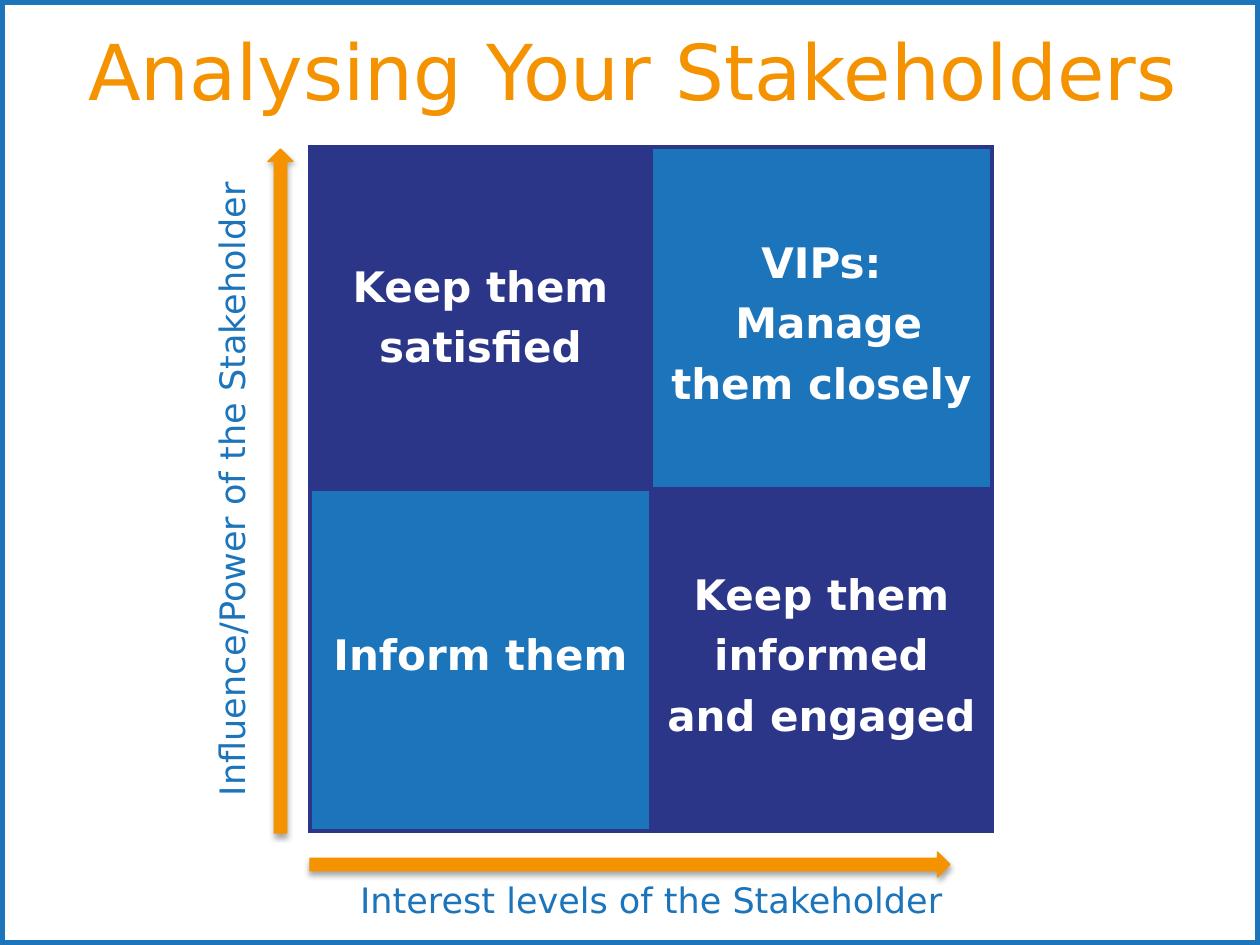
import dataclasses
import typing

import lxml.etree
import pptx
import pptx.dml.color
import pptx.enum.shapes
import pptx.enum.text
import pptx.oxml
import pptx.oxml.ns
import pptx.util

RGBColor = pptx.dml.color.RGBColor
MSO_SHAPE = pptx.enum.shapes.MSO_SHAPE
qn = pptx.oxml.ns.qn

WHITE = RGBColor(0xFF, 0xFF, 0xFF)
BLUE = RGBColor(0x1C, 0x75, 0xBB)
NAVY = RGBColor(0x2C, 0x36, 0x88)
ORANGE = RGBColor(0xF4, 0x92, 0x00)
FONT = "DejaVu Sans"

PX_PER_INCH = 126
SLIDE_WIDTH, SLIDE_HEIGHT = 1260, 945
GRID_LEFT, GRID_TOP = 310, 147
CELL_WIDTH, CELL_HEIGHT = 341, 342

SHADOW_XML = (
    '<a:effectLst xmlns:a="http://schemas.openxmlformats.org/drawingml/2006/main">'
    '<a:outerShdw blurRad="39370" dist="22860" dir="5400000" rotWithShape="0">'
    '<a:srgbClr val="000000"><a:alpha val="35000"/></a:srgbClr>'
    "</a:outerShdw></a:effectLst>"
)


@dataclasses.dataclass(frozen=True)
class Box:
    left: int
    top: int
    width: int
    height: int

    def emu(self) -> tuple[pptx.util.Emu, ...]:
        return tuple(px(side) for side in dataclasses.astuple(self))


@dataclasses.dataclass(frozen=True)
class Quadrant:
    row: int
    column: int
    fill: RGBColor
    text_top: int
    text_height: int
    lines: tuple[str, ...]


@dataclasses.dataclass(frozen=True)
class Axis:
    arrow: MSO_SHAPE
    arrow_box: Box
    label: str
    label_box: Box
    vertical: bool


QUADRANTS = (
    Quadrant(0, 0, NAVY, 244, 134, ("Keep them satisfied",)),
    Quadrant(0, 1, BLUE, 220, 194, ("VIPs:", " Manage them closely")),
    Quadrant(1, 0, BLUE, 612, 67, ("Inform them",)),
    Quadrant(1, 1, NAVY, 552, 194, ("Keep them informed and engaged",)),
)
AXES = (
    Axis(MSO_SHAPE.UP_ARROW, Box(268, 149, 25, 684),
         "Influence/Power of the Stakeholder", Box(204, 147, 68, 684), True),
    Axis(MSO_SHAPE.RIGHT_ARROW, Box(310, 852, 640, 25),
         "Interest levels of the Stakeholder", Box(310, 872, 683, 55), False),
)


def px(length: int) -> pptx.util.Emu:
    return pptx.util.Emu(round(length * 914400 / PX_PER_INCH))


def write_lines(frame: typing.Any, lines: tuple[str, ...], size: int, color: RGBColor,
                bold: bool = False, spacing: float = 1.0) -> None:
    frame.word_wrap = True
    for index, line in enumerate(lines):
        paragraph = frame.add_paragraph() if index else frame.paragraphs[0]
        paragraph.alignment = pptx.enum.text.PP_ALIGN.CENTER
        paragraph.line_spacing = spacing
        run = paragraph.add_run()
        run.text = line
        run.font.name = FONT
        run.font.size = pptx.util.Pt(size)
        run.font.bold = bold
        run.font.color.rgb = color


def draw_shape(slide: typing.Any, kind: MSO_SHAPE, box: Box, fill: RGBColor,
               line: RGBColor, line_width: float) -> None:
    shape = slide.shapes.add_shape(kind, *box.emu())
    shape.fill.solid()
    shape.fill.fore_color.rgb = fill
    shape.line.color.rgb = line
    shape.line.width = pptx.util.Pt(line_width)
    shape.shadow.inherit = False
    properties = shape._element.spPr
    properties.replace(properties.find(qn("a:effectLst")), pptx.oxml.parse_xml(SHADOW_XML))


def draw_title(slide: typing.Any) -> None:
    title = slide.shapes.title
    title.left, title.top, title.width, title.height = Box(20, 13, 1226, 113).emu()
    title.text_frame.vertical_anchor = pptx.enum.text.MSO_ANCHOR.MIDDLE
    title.text_frame.auto_size = pptx.enum.text.MSO_AUTO_SIZE.NONE
    write_lines(title.text_frame, ("Analysing Your Stakeholders",), 44, ORANGE)
    slide.shapes._spTree.append(title._element)


def set_borders(cell: typing.Any, color: RGBColor, width: float) -> None:
    properties = cell._tc.get_or_add_tcPr()
    for position, side in enumerate(("a:lnL", "a:lnR", "a:lnT", "a:lnB")):
        border = lxml.etree.Element(qn(side), w=str(pptx.util.Pt(width)))
        fill = lxml.etree.SubElement(border, qn("a:solidFill"))
        lxml.etree.SubElement(fill, qn("a:srgbClr"), val=str(color))
        properties.insert(position, border)


def draw_matrix(slide: typing.Any) -> None:
    box = Box(GRID_LEFT, GRID_TOP, 2 * CELL_WIDTH, 2 * CELL_HEIGHT)
    matrix = slide.shapes.add_table(2, 2, *box.emu()).table
    matrix.first_row = False
    matrix.horz_banding = False
    for quadrant in QUADRANTS:
        cell = matrix.cell(quadrant.row, quadrant.column)
        cell.fill.solid()
        cell.fill.fore_color.rgb = quadrant.fill
        set_borders(cell, NAVY, 3)


def draw_quadrant_text(slide: typing.Any, quadrant: Quadrant) -> None:
    left = GRID_LEFT + quadrant.column * CELL_WIDTH
    box = Box(left, quadrant.text_top, CELL_WIDTH, quadrant.text_height)
    advice = slide.shapes.add_textbox(*box.emu())
    write_lines(advice.text_frame, quadrant.lines, 24, WHITE, bold=True, spacing=1.2)


def draw_axis(slide: typing.Any, axis: Axis) -> None:
    label = slide.shapes.add_textbox(*axis.label_box.emu())
    write_lines(label.text_frame, (axis.label,), 20, BLUE)
    if axis.vertical:
        label.text_frame._txBody.bodyPr.set("vert", "vert270")
    draw_shape(slide, axis.arrow, axis.arrow_box, ORANGE, ORANGE, 0.75)


def main() -> None:
    presentation = pptx.Presentation()
    presentation.slide_width = px(SLIDE_WIDTH)
    presentation.slide_height = px(SLIDE_HEIGHT)
    slide = presentation.slides.add_slide(presentation.slide_layouts[5])
    draw_shape(slide, MSO_SHAPE.RECTANGLE, Box(0, 0, SLIDE_WIDTH, SLIDE_HEIGHT), WHITE, BLUE, 6)
    draw_title(slide)
    draw_matrix(slide)
    for axis in AXES:
        draw_axis(slide, axis)
    for quadrant in QUADRANTS:
        draw_quadrant_text(slide, quadrant)
    presentation.save("out.pptx")


if __name__ == "__main__":
    main()
